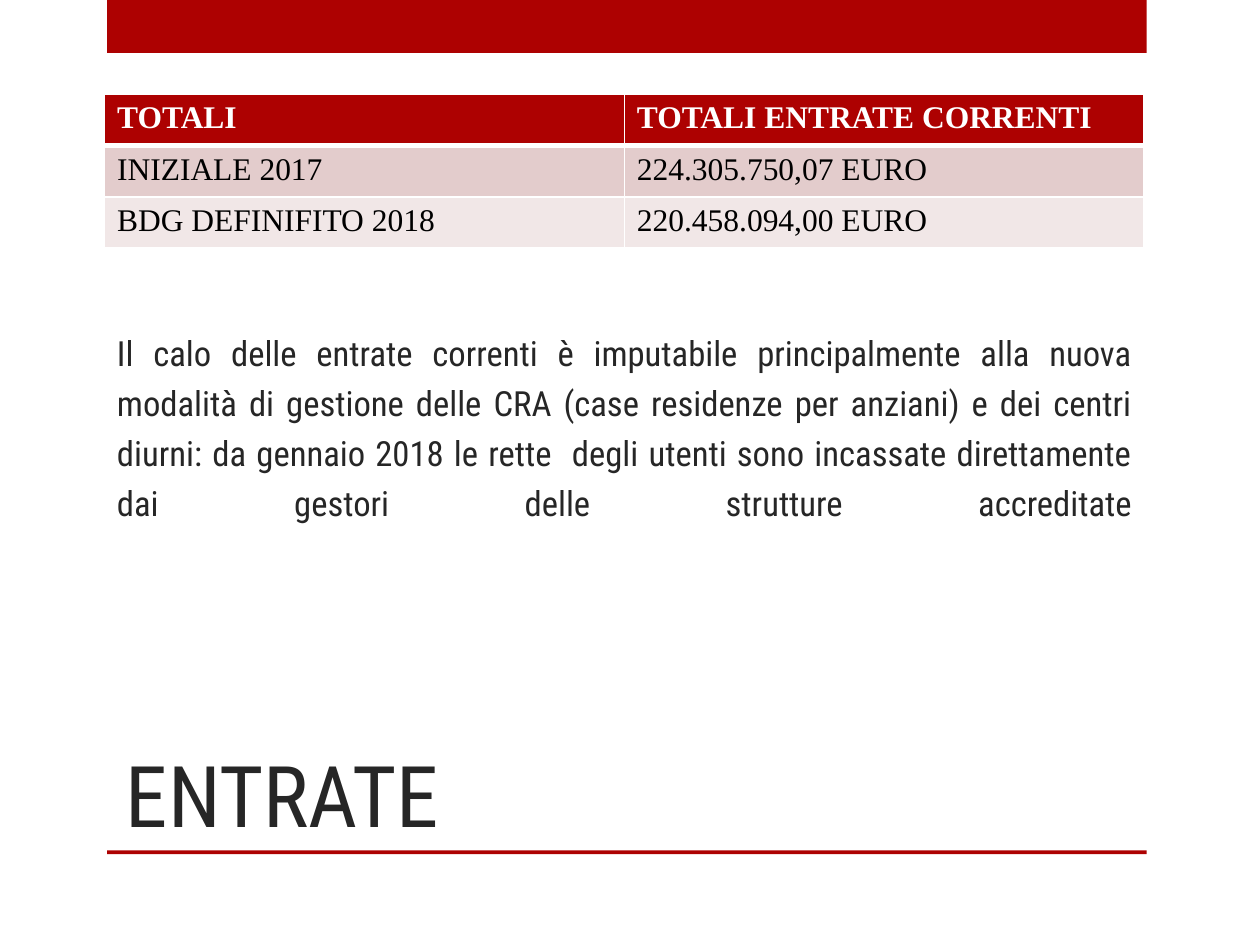
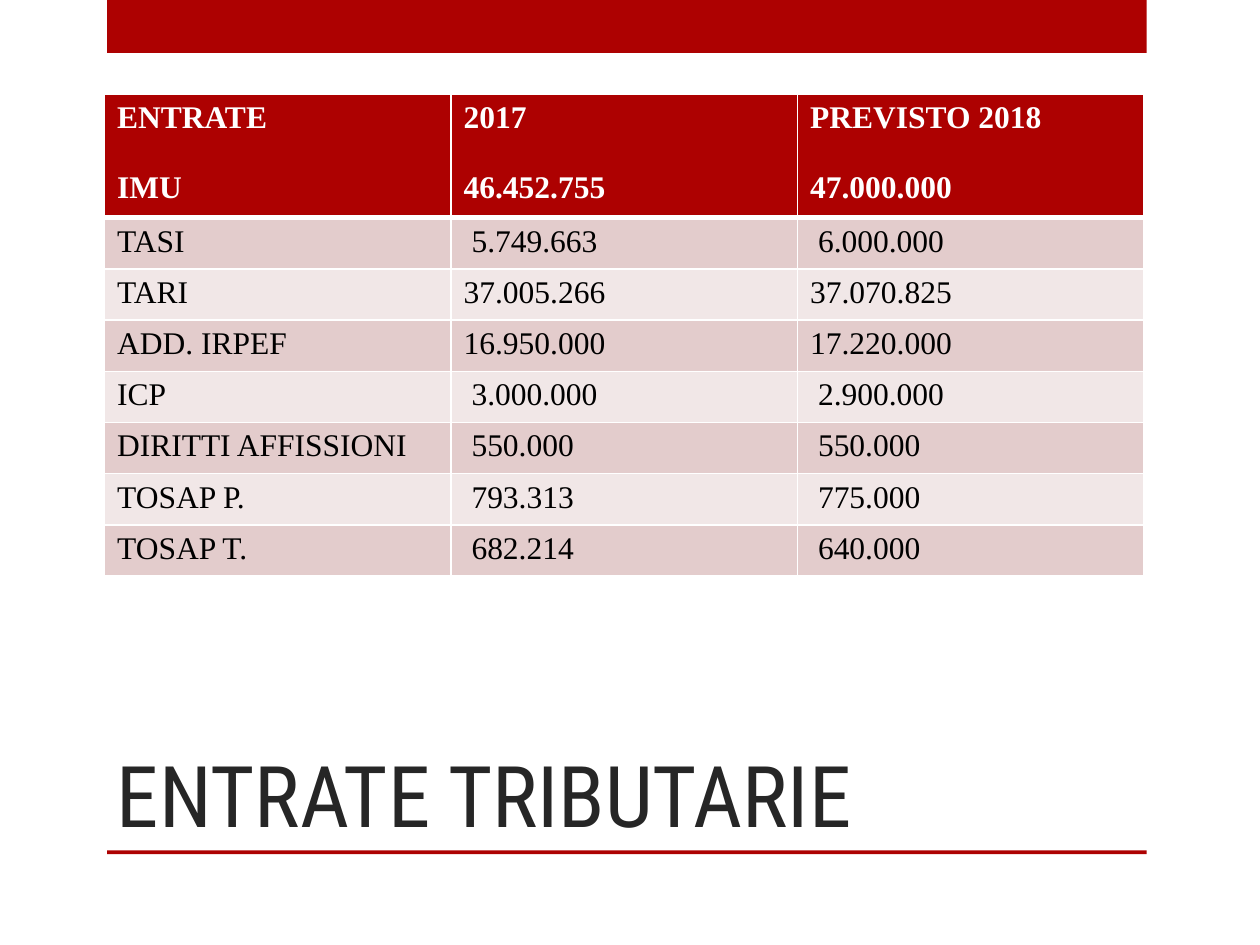
from dataclasses import dataclass

from lxml import etree
from pptx import Presentation
from pptx.dml.color import RGBColor
from pptx.enum.shapes import MSO_SHAPE
from pptx.enum.text import MSO_ANCHOR, PP_ALIGN
from pptx.oxml.ns import qn
from pptx.slide import Slide
from pptx.table import _Cell
from pptx.text.text import _Paragraph
from pptx.util import Inches, Pt

RECTANGLE = MSO_SHAPE.RECTANGLE
TOP, BOTTOM = MSO_ANCHOR.TOP, MSO_ANCHOR.BOTTOM
LEFT, JUSTIFY = PP_ALIGN.LEFT, PP_ALIGN.JUSTIFY

COLORS = {
    "accent": "AD0101",
    "ink": "262626",
    "cell text": "000000",
    "white": "FFFFFF",
    "odd row": "E3CCCC",
    "even row": "F1E7E7",
}
HEADING_FONT = "Roboto Condensed"
TABLE_FONT = "Times New Roman"

BAND_LEFT = 0.85
CONTENT_LEFT = 0.83
CONTENT_WIDTH = 8.25
TABLE_TOP = 0.75
ROW_HEIGHT = 1.22 / 3


@dataclass
class Band:
    top: float
    height: float


@dataclass
class TextBlock:
    text: str
    left: float
    top: float
    width: float
    height: float
    size: float
    anchor: MSO_ANCHOR = BOTTOM
    align: PP_ALIGN = LEFT
    spacing: float = 1.0


@dataclass
class TableBlock:
    rows: list[tuple[str, ...]]
    header_height: float = ROW_HEIGHT


@dataclass
class Page:
    table: TableBlock
    texts: list[TextBlock]


BANDS = [Band(0, 0.42), Band(6.75, 0.03)]


def title(text: str, left: float = CONTENT_LEFT) -> TextBlock:
    return TextBlock(text, left, 5.78, 7.42, 0.97, 48.6)


PAGES = [
    Page(
        TableBlock([
            ("TOTALI", "TOTALI ENTRATE CORRENTI"),
            ("INIZIALE 2017", "224.305.750,07 EURO"),
            ("BDG DEFINIFITO 2018", "220.458.094,00 EURO"),
        ]),
        [
            # The closing line break stretches the last justified line
            TextBlock(
                "Il calo delle entrate correnti è imputabile principalmente alla "
                "nuova modalità di gestione delle CRA (case residenze per anziani) "
                "e dei centri diurni: da gennaio 2018 le rette  degli utenti sono "
                "incassate direttamente dai gestori delle strutture accreditate\v",
                CONTENT_LEFT, 2.52, CONTENT_WIDTH, 2.1, 19.8, TOP, JUSTIFY, 1.2),
            title("ENTRATE", CONTENT_LEFT + 0.07),
        ],
    ),
    Page(
        TableBlock([
            ("ENTRATE\nIMU", "2017\n46.452.755", "PREVISTO 2018\n47.000.000"),
            ("TASI", " 5.749.663", " 6.000.000"),
            ("TARI", "37.005.266", "37.070.825"),
            ("ADD. IRPEF", "16.950.000", "17.220.000"),
            ("ICP", " 3.000.000", " 2.900.000"),
            ("DIRITTI AFFISSIONI", " 550.000", " 550.000"),
            ("TOSAP P.", " 793.313", " 775.000"),
            ("TOSAP T.", " 682.214", " 640.000"),
        ], header_height=0.93),
        [title("ENTRATE TRIBUTARIE")],
    ),
]


def color(name: str) -> RGBColor:
    return RGBColor.from_string(COLORS[name])


def format_runs(para: _Paragraph, font: str, size: float, ink: str,
                bold: bool = False) -> None:
    for span in para.runs:
        span.font.name = font
        span.font.size = Pt(size)
        span.font.bold = bold
        span.font.color.rgb = color(ink)


def add_band(page: Slide, band: Band) -> None:
    shape = page.shapes.add_shape(RECTANGLE, Inches(BAND_LEFT), Inches(band.top),
                                  Inches(CONTENT_WIDTH), Inches(band.height))
    shape.shadow.inherit = False
    shape.fill.solid()
    shape.fill.fore_color.rgb = color("accent")
    shape.line.fill.background()


def add_text(page: Slide, block: TextBlock) -> None:
    box = page.shapes.add_textbox(Inches(block.left), Inches(block.top),
                                  Inches(block.width), Inches(block.height))
    frame = box.text_frame
    frame.word_wrap = True
    frame.vertical_anchor = block.anchor
    para = frame.paragraphs[0]
    para.text = block.text
    para.alignment = block.align
    para.line_spacing = block.spacing
    format_runs(para, HEADING_FONT, block.size, "ink")


def set_borders(cell: _Cell, widths: dict[str, float]) -> None:
    properties = cell._tc.get_or_add_tcPr()
    for position, (side, width) in enumerate(widths.items()):
        line = etree.Element(qn(f"a:{side}"), w=str(Pt(width)))
        fill = etree.SubElement(line, qn("a:solidFill"))
        etree.SubElement(fill, qn("a:srgbClr"), val=COLORS["white"])
        properties.insert(position, line)


def style_cell(cell: _Cell, text: str, row: int) -> None:
    header = row == 0
    fill = "accent" if header else ("odd row" if row % 2 else "even row")
    cell.fill.solid()
    cell.fill.fore_color.rgb = color(fill)
    cell.text_frame.text = text
    for index, para in enumerate(cell.text_frame.paragraphs):
        if index:
            para.space_before = Pt(20)
        format_runs(para, TABLE_FONT, 18, "white" if header else "cell text", header)
    set_borders(cell, {"lnL": 1, "lnR": 1, "lnT": 3 if row == 1 else 1,
                       "lnB": 3 if header else 1})


def add_table(page: Slide, block: TableBlock) -> None:
    row_count, column_count = len(block.rows), len(block.rows[0])
    height = block.header_height + (row_count - 1) * ROW_HEIGHT
    table = page.shapes.add_table(row_count, column_count, Inches(CONTENT_LEFT),
                                  Inches(TABLE_TOP), Inches(CONTENT_WIDTH),
                                  Inches(height)).table
    table.horz_banding = False
    for column in table.columns:
        column.width = Inches(CONTENT_WIDTH / column_count)
    for row, texts in enumerate(block.rows):
        table.rows[row].height = Inches(ROW_HEIGHT if row else block.header_height)
        for column, text in enumerate(texts):
            style_cell(table.cell(row, column), text, row)


def main() -> None:
    deck = Presentation()
    deck.slide_width, deck.slide_height = Inches(10), Inches(7.5)
    for content in PAGES:
        page = deck.slides.add_slide(deck.slide_layouts[6])
        for band in BANDS:
            add_band(page, band)
        for block in content.texts:
            add_text(page, block)
        add_table(page, content.table)
    deck.save("out.pptx")


if __name__ == "__main__":
    main()
